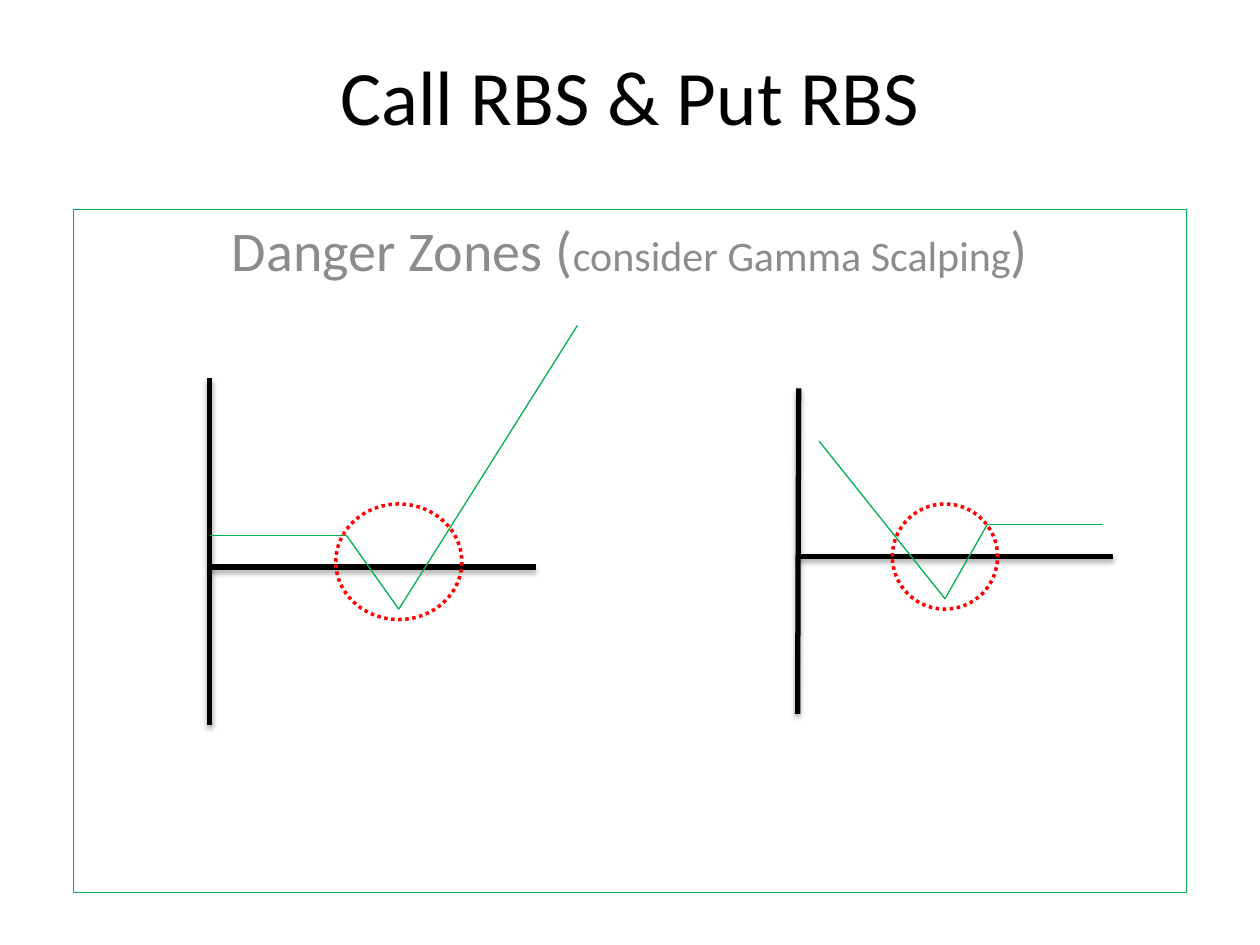
from itertools import pairwise

from lxml import etree
from pptx import Presentation
from pptx.dml.color import RGBColor
from pptx.enum.dml import MSO_LINE
from pptx.enum.shapes import MSO_CONNECTOR, MSO_SHAPE
from pptx.enum.text import MSO_ANCHOR, PP_ALIGN
from pptx.oxml.ns import qn
from pptx.util import Cm, Pt

STRAIGHT = MSO_CONNECTOR.STRAIGHT
RECTANGLE, OVAL = MSO_SHAPE.RECTANGLE, MSO_SHAPE.OVAL
DOTTED = MSO_LINE.ROUND_DOT
CENTER = PP_ALIGN.CENTER
TOP, MIDDLE = MSO_ANCHOR.TOP, MSO_ANCHOR.MIDDLE

BLACK = RGBColor(0x00, 0x00, 0x00)
GRAY = RGBColor(0x8C, 0x8C, 0x8C)
GREEN = RGBColor(0x00, 0xB0, 0x50)
RED = RGBColor(0xFF, 0x00, 0x00)
FONT = "Calibri"

# Each chart in centimetres: axes, payoff points, danger zone box
CHARTS = [
    {
        "axes": [[(4.23, 7.62), (4.23, 14.61)], [(4.23, 11.43), (10.8, 11.43)]],
        "payoff": [(4.23, 10.8), (6.99, 10.8), (8.04, 12.28), (11.64, 6.56)],
        "zone": (6.77, 10.16, 2.54, 2.33),
    },
    {
        "axes": [[(16.1, 7.83), (16.08, 14.39)], [(16.08, 11.22), (22.44, 11.22)]],
        "payoff": [(22.23, 10.58), (19.9, 10.58), (19.05, 12.07), (16.51, 8.89)],
        "zone": (17.99, 10.16, 2.12, 2.12),
    },
]


def write_text(shape, spans, color=BLACK, anchor=TOP):
    """Write one centred paragraph from (text, size) spans."""
    frame = shape.text_frame
    frame.word_wrap = True
    frame.vertical_anchor = anchor
    para = frame.paragraphs[0]
    para.alignment = CENTER
    for text, size in spans:
        span = para.add_run()
        span.text = text
        span.font.name = FONT
        span.font.size = Pt(size)
        span.font.color.rgb = color


def add_outline(page, kind, box, color, width, dash=None):
    shape = page.shapes.add_shape(kind, *map(Cm, box))
    shape.shadow.inherit = False
    shape.fill.background()
    shape.line.color.rgb = color
    shape.line.width = Pt(width)
    if dash:
        shape.line.dash_style = dash
    return shape


def add_shadow(effects):
    shadow = etree.SubElement(
        effects, qn("a:outerShdw"), blurRad=str(Pt(3.1)), dist=str(Pt(1.8)),
        dir="5400000", rotWithShape="0")
    color = etree.SubElement(shadow, qn("a:srgbClr"), val=str(BLACK))
    etree.SubElement(color, qn("a:alpha"), val="35000")


def add_path(page, points, color, width, shadow=False):
    """Join successive points with straight lines."""
    for start, end in pairwise(points):
        line = page.shapes.add_connector(STRAIGHT, *map(Cm, start + end))
        line.line.color.rgb = color
        line.line.width = Pt(width)
        effects = etree.SubElement(line._element.spPr, qn("a:effectLst"))
        if shadow:
            add_shadow(effects)


def main():
    deck = Presentation()
    deck.slide_width, deck.slide_height = Cm(25.4), Cm(19.05)
    page = deck.slides.add_slide(deck.slide_layouts[6])

    # Title and framed subtitle
    title = page.shapes.add_textbox(Cm(1.91), Cm(0.43), Cm(21.59), Cm(2.97))
    write_text(title, [("Call RBS & Put RBS", 44)], anchor=MIDDLE)
    frame = add_outline(page, RECTANGLE, (1.48, 4.23, 22.44, 13.76), GREEN, 0.75)
    write_text(frame, [("Danger Zones (", 32), ("consider Gamma Scalping", 24),
                       (")", 32)], color=GRAY)

    # Payoff charts with their danger zones
    for chart in CHARTS:
        for axis in chart["axes"]:
            add_path(page, axis, BLACK, 3, shadow=True)
        add_path(page, chart["payoff"], GREEN, 0.75)
        add_outline(page, OVAL, chart["zone"], RED, 2, DOTTED)

    deck.save("out.pptx")


if __name__ == "__main__":
    main()
